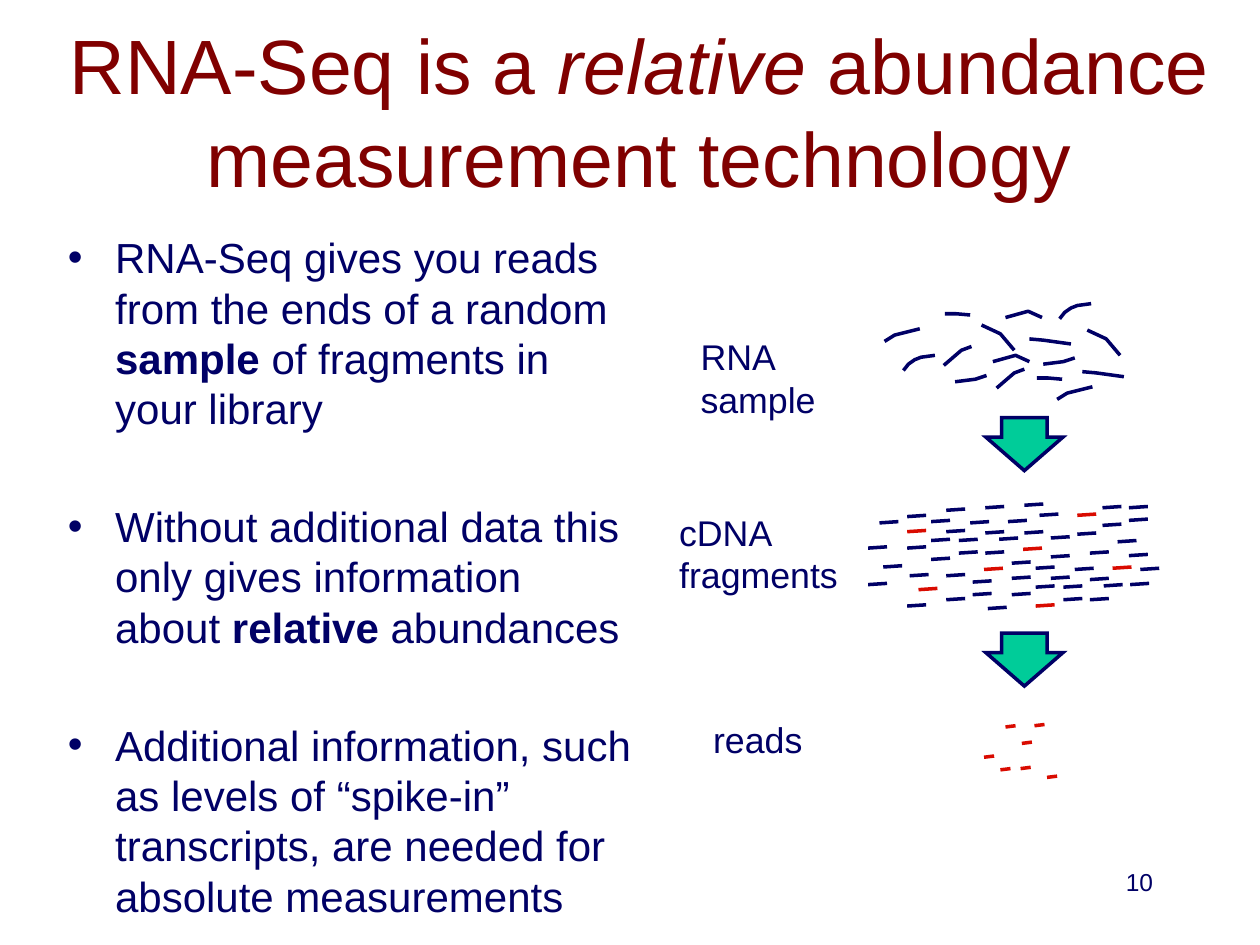
from dataclasses import dataclass

from lxml import etree
from pptx import Presentation, util as u
from pptx.dml.color import RGBColor
from pptx.enum import shapes, text
from pptx.oxml import ns

# The slide is a grid of 1000 columns by 750 rows.
SLIDE_WIDTH = u.Inches(10)
SLIDE_HEIGHT = u.Inches(7.5)
UNIT = SLIDE_WIDTH // 1000

Point = tuple[float, float]


@dataclass(frozen=True)
class Theme:
    font: str = "Arial"
    heading: RGBColor = RGBColor(0x80, 0x00, 0x00)
    ink: RGBColor = RGBColor(0x00, 0x00, 0x66)
    sampled: RGBColor = RGBColor(0xD9, 0x0B, 0x00)
    arrow: RGBColor = RGBColor(0x00, 0xCC, 0x99)
    title_size: float = 44
    body_size: float = 24
    label_size: float = 20.4
    number_size: float = 14
    line_width: float = 2


@dataclass(frozen=True)
class Box:
    left: float
    top: float
    width: float
    height: float

    def emu(self) -> list[int]:
        return [round(value * UNIT) for value in (self.left, self.top, self.width, self.height)]


@dataclass(frozen=True)
class Run:
    text: str
    bold: bool = False
    italic: bool = False


@dataclass(frozen=True)
class Strand:
    """One RNA outline and the places where it is repeated."""
    outline: list[Point]
    places: list[Point]


@dataclass(frozen=True)
class Label:
    lines: list[str]
    box: Box


THEME = Theme()

TITLE = [Run("RNA-Seq is a "), Run("relative ", italic=True),
         Run("abundance measurement technology")]

BULLETS = [
    [Run("RNA-Seq gives you reads from the ends of a random "), Run("sample ", bold=True),
     Run("of fragments in your library")],
    [Run("Without additional data this only gives information about "),
     Run("relative", bold=True), Run(" abundances")],
    [Run("Additional information, such as levels of “spike-in” transcripts, "
         "are needed for absolute measurements")],
]

STRANDS = [
    Strand([(0, 12), (4, 7), (9, 3.5), (14, 1.5), (25, 0)], [(717, 282), (841, 241)]),
    Strand([(0, 5), (16, 3), (25, 0)], [(828, 284), (758, 298)]),
    Strand([(0, 0), (9, 0), (20, 1)], [(750, 249), (823, 300)]),
    Strand([(0, 15), (14, 3), (22, 0)], [(749, 275), (791, 293)]),
    Strand([(0, 0), (15, 7), (26, 20)], [(779, 258), (863, 262)]),
    Strand([(0, 5), (18, 0), (29, 5)], [(788, 282), (798, 247)]),
    Strand([(0, 0), (11, 1), (33, 4)], [(817, 269), (859, 295)]),
    Strand([(0, 10), (8, 5), (28, 0)], [(839, 307), (702, 261)]),
]

# Row of the grid -> columns where a fragment starts.
FRAGMENTS = {
    401: [813], 403: [782, 875, 896], 405: [751], 409: [825], 410: [720], 413: [896],
    414: [739, 800], 415: [698, 770], 417: [875], 422: [751], 423: [782, 813], 424: [855],
    427: [834], 428: [793], 429: [739, 761], 430: [887], 435: [689, 720],
    439: [761, 782, 865], 441: [896], 442: [834], 444: [739], 447: [803], 450: [701],
    451: [822], 452: [853, 905], 457: [722, 751], 459: [803, 834], 460: [865], 462: [772],
    464: [689, 897], 465: [876], 466: [822, 844], 472: [772, 803], 476: [751, 844, 865],
    481: [720], 483: [784],
}
SAMPLED_FRAGMENTS = {409: [855], 422: [720], 436: [812], 451: [883], 452: [781],
                     468: [729], 481: [822]}
READS = {576: [821], 577: [798], 590: [811], 601: [781], 610: [810], 611: [794], 617: [831]}
FRAGMENT_LENGTH = 15
READ_LENGTH = 8

LABELS = [
    Label(["RNA", "sample"], Box(556, 265, 92, 69)),
    Label(["cDNA", "fragments"], Box(539, 404, 127, 69)),
    Label(["reads"], Box(566, 570, 72, 34)),
]
ARROWS = [Box(782.5, top, 61, 42) for top in (331.5, 502.5)]


def write_runs(paragraph, runs: list[Run], size: float, color: RGBColor) -> None:
    for item in runs:
        run = paragraph.add_run()
        run.text = item.text
        font = run.font
        font.name, font.size = THEME.font, u.Pt(size)
        font.bold, font.italic = item.bold, item.italic
        font.color.rgb = color


def style_line(line, color: RGBColor) -> None:
    line.color.rgb = color
    line.width = u.Pt(THEME.line_width)


def add_title(slide) -> None:
    title = slide.shapes.title
    title.left, title.top, title.width, title.height = Box(45, 25, 925, 125).emu()
    frame = title.text_frame
    frame.auto_size = text.MSO_AUTO_SIZE.NONE
    frame.vertical_anchor = text.MSO_ANCHOR.MIDDLE
    frame.paragraphs[0].alignment = text.PP_ALIGN.CENTER
    write_runs(frame.paragraphs[0], TITLE, THEME.title_size, THEME.heading)


def add_bullets(slide) -> None:
    frame = slide.shapes.add_textbox(*Box(44, 179, 468, 505).emu()).text_frame
    frame.word_wrap = True
    for index, runs in enumerate(BULLETS):
        paragraph = frame.add_paragraph() if index else frame.paragraphs[0]
        paragraph.space_before = u.Pt(38.4 if index else 4.8)
        properties = paragraph._p.get_or_add_pPr()
        indent = round(37.5 * UNIT)
        properties.set("marL", str(indent))
        properties.set("indent", str(-indent))
        etree.SubElement(properties, ns.qn("a:buFont"), typeface=THEME.font)
        etree.SubElement(properties, ns.qn("a:buChar"), char="•")
        write_runs(paragraph, runs, THEME.body_size, THEME.ink)


def add_strand(slide, strand: Strand) -> None:
    for left, top in strand.places:
        points = [((left + x) * UNIT, (top + y) * UNIT) for x, y in strand.outline]
        builder = slide.shapes.build_freeform(*points[0])
        builder.add_line_segments(points[1:], close=False)
        shape = builder.convert_to_shape()
        shape.fill.background()
        style_line(shape.line, THEME.ink)
        shape.shadow.inherit = False


def add_dashes(slide, rows: dict[int, list[int]], length: int, color: RGBColor) -> None:
    """Draw short lines that rise by one row from left to right."""
    for row, columns in rows.items():
        for column in columns:
            dash = slide.shapes.add_connector(
                shapes.MSO_CONNECTOR.STRAIGHT, column * UNIT, row * UNIT,
                (column + length) * UNIT, (row - 1) * UNIT)
            style_line(dash.line, color)
            etree.SubElement(dash._element.spPr, ns.qn("a:effectLst"))


def add_arrow(slide, box: Box) -> None:
    arrow = slide.shapes.add_shape(shapes.MSO_SHAPE.DOWN_ARROW, *box.emu())
    arrow.adjustments[0], arrow.adjustments[1] = 0.59, 0.63
    arrow.fill.solid()
    arrow.fill.fore_color.rgb = THEME.arrow
    style_line(arrow.line, THEME.ink)
    etree.SubElement(arrow.line._get_or_add_ln(), ns.qn("a:miter"), lim="800000")
    arrow.shadow.inherit = False


def add_label(slide, label: Label) -> None:
    frame = slide.shapes.add_textbox(*label.box.emu()).text_frame
    frame.margin_left = frame.margin_right = frame.margin_top = frame.margin_bottom = 0
    frame.word_wrap = False
    frame.vertical_anchor = text.MSO_ANCHOR.BOTTOM
    for index, line in enumerate(label.lines):
        paragraph = frame.add_paragraph() if index else frame.paragraphs[0]
        write_runs(paragraph, [Run(line)], THEME.label_size, THEME.ink)


def add_slide_number(slide) -> None:
    frame = slide.shapes.add_textbox(*Box(717, 683, 208, 50).emu()).text_frame
    frame.word_wrap = True
    frame.paragraphs[0].alignment = text.PP_ALIGN.RIGHT
    write_runs(frame.paragraphs[0], [Run("10")], THEME.number_size, THEME.ink)


def main() -> None:
    presentation = Presentation()
    presentation.slide_width, presentation.slide_height = SLIDE_WIDTH, SLIDE_HEIGHT
    slide = presentation.slides.add_slide(presentation.slide_layouts[5])
    add_title(slide)
    add_bullets(slide)
    for strand in STRANDS:
        add_strand(slide, strand)
    add_dashes(slide, FRAGMENTS, FRAGMENT_LENGTH, THEME.ink)
    add_dashes(slide, SAMPLED_FRAGMENTS, FRAGMENT_LENGTH, THEME.sampled)
    add_dashes(slide, READS, READ_LENGTH, THEME.sampled)
    for label in LABELS:
        add_label(slide, label)
    for box in ARROWS:
        add_arrow(slide, box)
    add_slide_number(slide)
    presentation.save("out.pptx")


if __name__ == "__main__":
    main()
